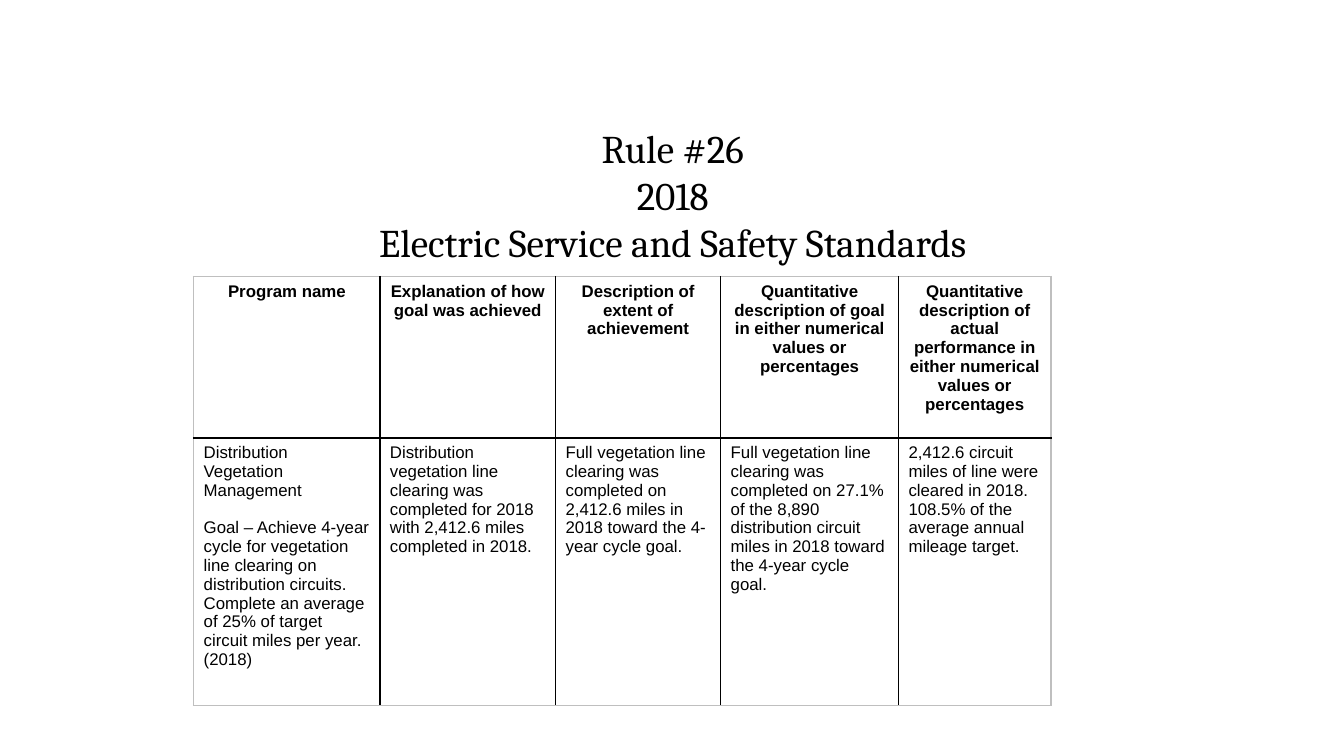
from lxml.etree import SubElement
from pptx import Presentation
from pptx.dml.color import RGBColor
from pptx.enum.text import MSO_ANCHOR, PP_ALIGN
from pptx.oxml.ns import qn
from pptx.util import Cm, Pt

TITLE = "Rule #26\n2018\nElectric Service and Safety Standards"
HEADINGS = [
    "Program name",
    "Explanation of how goal was achieved",
    "Description of extent of achievement",
    "Quantitative description of goal in either numerical values or percentages",
    "Quantitative description of actual performance in either numerical values or percentages",
]
VEGETATION = [
    "Distribution Vegetation Management",
    "Distribution vegetation line clearing was completed for 2018 with 2,412.6 miles "
    "completed in 2018.",
    "Full vegetation line clearing was completed on 2,412.6 miles in 2018 toward the "
    "4-year cycle goal.",
    "Full vegetation line clearing was completed on 27.1% of the 8,890 distribution "
    "circuit miles in 2018 toward the 4-year cycle goal.",
    "2,412.6 circuit miles of line were cleared in 2018.  108.5% of the average annual "
    "mileage target.",
]
GOAL = (
    "Goal – Achieve 4-year cycle for vegetation line clearing on distribution circuits.  "
    "Complete an average of 25% of target circuit miles per year. (2018)"
)
ROWS = [HEADINGS, VEGETATION]
COLUMN_WIDTHS = [3.52, 3.32, 3.12, 3.36, 2.88]
ROW_HEIGHTS = [3.05, 5.06]
BLACK, GREY, WHITE = "000000", "BFBFBF", "FFFFFF"


def color(hex_string):
    return RGBColor.from_string(hex_string)


def write(paragraph, text, font="Arial", size=9, bold=False,
          align=PP_ALIGN.LEFT, before=0):
    paragraph.text = text
    paragraph.alignment = align
    paragraph.space_before = Pt(before)
    for run in paragraph.runs:
        run.font.name = font
        run.font.size = Pt(size)
        run.font.bold = bold
        run.font.color.rgb = color(BLACK)


def draw_borders(cell, sides):
    """Add one line per side; sides maps a:lnL, a:lnR, a:lnT, a:lnB to colours."""
    properties = cell._tc.get_or_add_tcPr()
    for position, (side, hex_string) in enumerate(sides.items()):
        line = properties.makeelement(qn(side), {"w": str(Pt(1))})
        fill = SubElement(line, qn("a:solidFill"))
        SubElement(fill, qn("a:srgbClr"), val=hex_string)
        properties.insert(position, line)


presentation = Presentation()
presentation.slide_width, presentation.slide_height = Cm(25.4), Cm(14.29)
slide = presentation.slides.add_slide(presentation.slide_layouts[6])

table = slide.shapes.add_table(
    len(ROWS), len(HEADINGS), Cm(3.66), Cm(5.23),
    Cm(sum(COLUMN_WIDTHS)), Cm(sum(ROW_HEIGHTS))).table
for column, width in zip(table.columns, COLUMN_WIDTHS):
    column.width = Cm(width)
for row, height in zip(table.rows, ROW_HEIGHTS):
    row.height = Cm(height)

last_row, last_column = len(ROWS) - 1, len(HEADINGS) - 1
for r, texts in enumerate(ROWS):
    for c, text in enumerate(texts):
        cell = table.cell(r, c)
        cell.margin_left = cell.margin_right = Cm(0.19)
        cell.margin_top = cell.margin_bottom = Cm(0.1)
        cell.fill.solid()
        cell.fill.fore_color.rgb = color(WHITE)
        draw_borders(cell, {
            "a:lnL": GREY if c == 0 else BLACK,
            "a:lnR": GREY if c == last_column else BLACK,
            "a:lnT": GREY if r == 0 else BLACK,
            "a:lnB": GREY if r == last_row else BLACK,
        })
        heading = r == 0
        write(cell.text_frame.paragraphs[0], text, bold=heading,
              align=PP_ALIGN.CENTER if heading else PP_ALIGN.LEFT)
write(table.cell(1, 0).text_frame.add_paragraph(), GOAL, before=10)

title = slide.shapes.add_textbox(Cm(3.61), Cm(2.49), Cm(18.21), Cm(2.39)).text_frame
title.word_wrap = True
title.vertical_anchor = MSO_ANCHOR.MIDDLE
write(title.paragraphs[0], TITLE, font="Cambria", size=21, align=PP_ALIGN.CENTER)

presentation.save("out.pptx")
